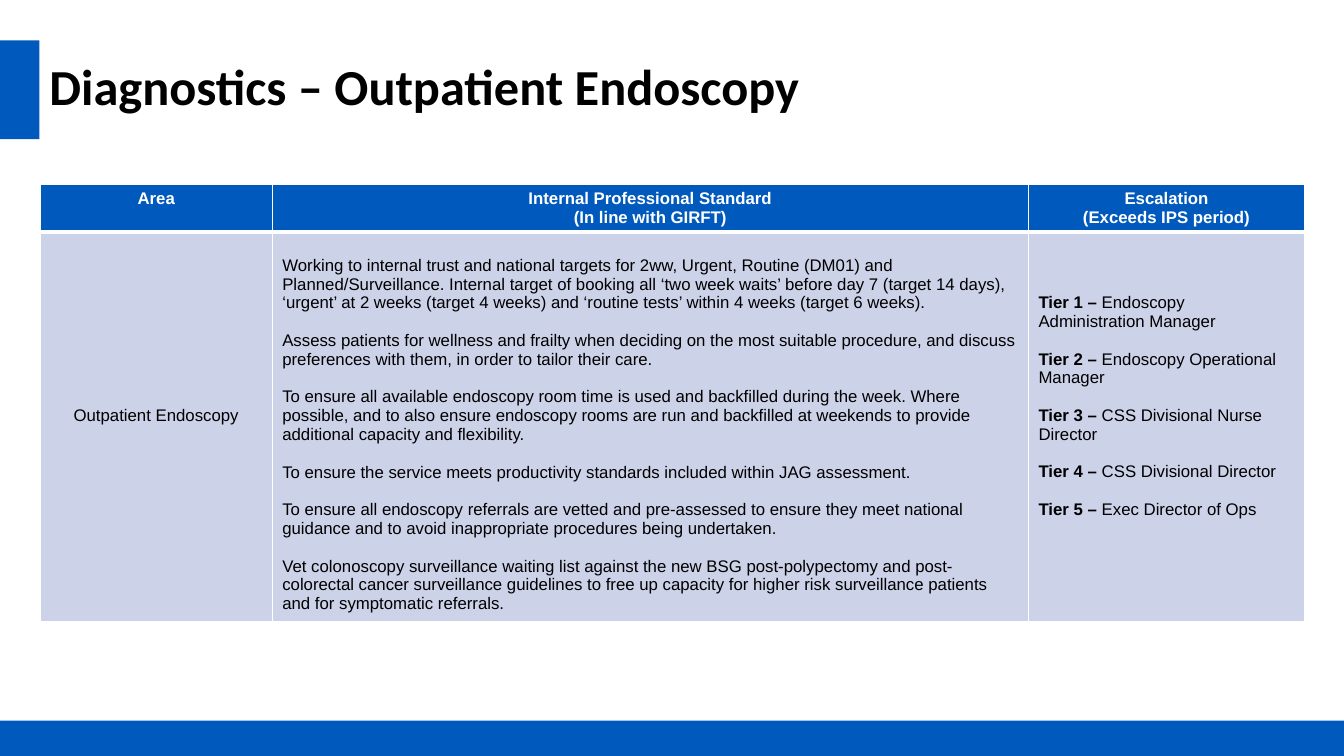
from lxml.etree import SubElement
from pptx import Presentation
from pptx.dml.color import RGBColor
from pptx.enum.shapes import MSO_SHAPE
from pptx.enum.text import MSO_ANCHOR, PP_ALIGN
from pptx.oxml.ns import qn
from pptx.util import Inches, Pt

HUES = {"blue": "005ABD", "pale": "CCD2E8", "white": "FFFFFF", "black": "000000"}
LINE = 13.4  # height of one table line, in points
PAD = 3.6  # cell margin above the text, in points

HEADS = [
    ["Area"],
    ["Internal Professional Standard", "(In line with GIRFT)"],
    ["Escalation", "(Exceeds IPS period)"],
]
GOALS = [
    "Working to internal trust and national targets for 2ww, Urgent, Routine (DM01) and Planned/Surveillance. Internal target of booking all ‘two week waits’ before day 7 (target 14 days), ‘urgent’ at 2 weeks (target 4 weeks) and ‘routine tests’ within 4 weeks (target 6 weeks).",
    "Assess patients for wellness and frailty when deciding on the most suitable procedure, and discuss preferences with them, in order to tailor their care.",
    "To ensure all available endoscopy room time is used and backfilled during the week. Where possible, and to also ensure endoscopy rooms are run and backfilled at weekends to provide additional capacity and flexibility.",
    "To ensure the service meets productivity standards included within JAG assessment.",
    "To ensure all endoscopy referrals are vetted and pre-assessed to ensure they meet national guidance and to avoid inappropriate procedures being undertaken.",
    "Vet colonoscopy surveillance waiting list against the new BSG post-polypectomy and post-colorectal cancer surveillance guidelines to free up capacity for higher risk surveillance patients and for symptomatic referrals.",
]
ROLES = [
    "Endoscopy Administration Manager",
    "Endoscopy Operational Manager",
    "CSS Divisional Nurse Director",
    "CSS Divisional Director",
    "Exec Director of Ops",
]
TIERS = [f"Tier {rank} – |{role}" for rank, role in enumerate(ROLES, 1)]


def paint(cell, hue, top, base):
    """Fill a cell and rule it in white; top and base are line widths."""
    props = cell._tc.get_or_add_tcPr()
    for side, width in zip("LRTB", (1, 1, top, base)):
        rule = SubElement(props, qn(f"a:ln{side}"), w=str(Pt(width)))
        fill = SubElement(rule, qn("a:solidFill"))
        SubElement(fill, qn("a:srgbClr"), val=HUES["white"])
    cell.fill.solid()
    cell.fill.fore_color.rgb = RGBColor.from_string(HUES[hue])


def write(cell, texts, hue, bold, align, gap, skip):
    """Write paragraphs gap points apart, skip lines down; text before | is bold."""
    cell.margin_top = Pt(PAD + skip * LINE)
    frame = cell.text_frame
    for i, text in enumerate(texts):
        para = frame.paragraphs[0] if i == 0 else frame.add_paragraph()
        para.alignment = align
        if i:
            para.space_before = Pt(gap)
        para.font.name = "Arial"
        para.font.size = Pt(12)
        para.font.bold = bold
        para.font.color.rgb = RGBColor.from_string(HUES[hue])
        lead, mark, rest = text.partition("|")
        para.add_run().text = lead
        if mark:
            para.runs[0].font.bold = True
            para.add_run().text = rest


deck = Presentation()
deck.slide_width, deck.slide_height = Inches(13.33), Inches(7.5)
slide = deck.slides.add_slide(deck.slide_layouts[5])

# Title and blue bars
title = slide.shapes.title
title.left, title.top = Inches(0.39), Inches(0.4)
title.width, title.height = Inches(10.78), Inches(0.98)
title.text_frame.vertical_anchor = MSO_ANCHOR.MIDDLE
title.text_frame.text = "Diagnostics – Outpatient Endoscopy"
head = title.text_frame.paragraphs[0]
head.alignment = PP_ALIGN.LEFT
head.line_spacing = 0.9
head.font.name = "Calibri"
head.font.size = Pt(36)
head.font.bold = True
head.font.color.rgb = RGBColor.from_string(HUES["black"])

for box in [(0, 0.4, 0.39, 0.98), (0, 7.15, 13.33, 0.35)]:
    bar = slide.shapes.add_shape(MSO_SHAPE.RECTANGLE, *map(Inches, box))
    bar.shadow.inherit = False
    bar.fill.solid()
    bar.fill.fore_color.rgb = RGBColor.from_string(HUES["blue"])
    bar.line.fill.background()

# Table of standards
cols, rows = [2.3, 7.5, 2.74], [0.47, 3.86]
table = slide.shapes.add_table(
    2, 3, Inches(0.4), Inches(1.83), Inches(sum(cols)), Inches(sum(rows))
).table
for col, width in zip(table.columns, cols):
    col.width = Inches(width)
for row, height in zip(table.rows, rows):
    row.height = Inches(height)

BODY = [
    (["Outpatient Endoscopy"], PP_ALIGN.CENTER, 9),
    (GOALS, PP_ALIGN.LEFT, 1),
    (TIERS, PP_ALIGN.LEFT, 3),
]
for i, (label, (texts, align, skip)) in enumerate(zip(HEADS, BODY)):
    top, main = table.cell(0, i), table.cell(1, i)
    paint(top, "blue", 1, 3)
    write(top, label, "white", True, PP_ALIGN.CENTER, 0, 0)
    paint(main, "pale", 3, 1)
    write(main, texts, "black", False, align, LINE, skip)

deck.save("out.pptx")
